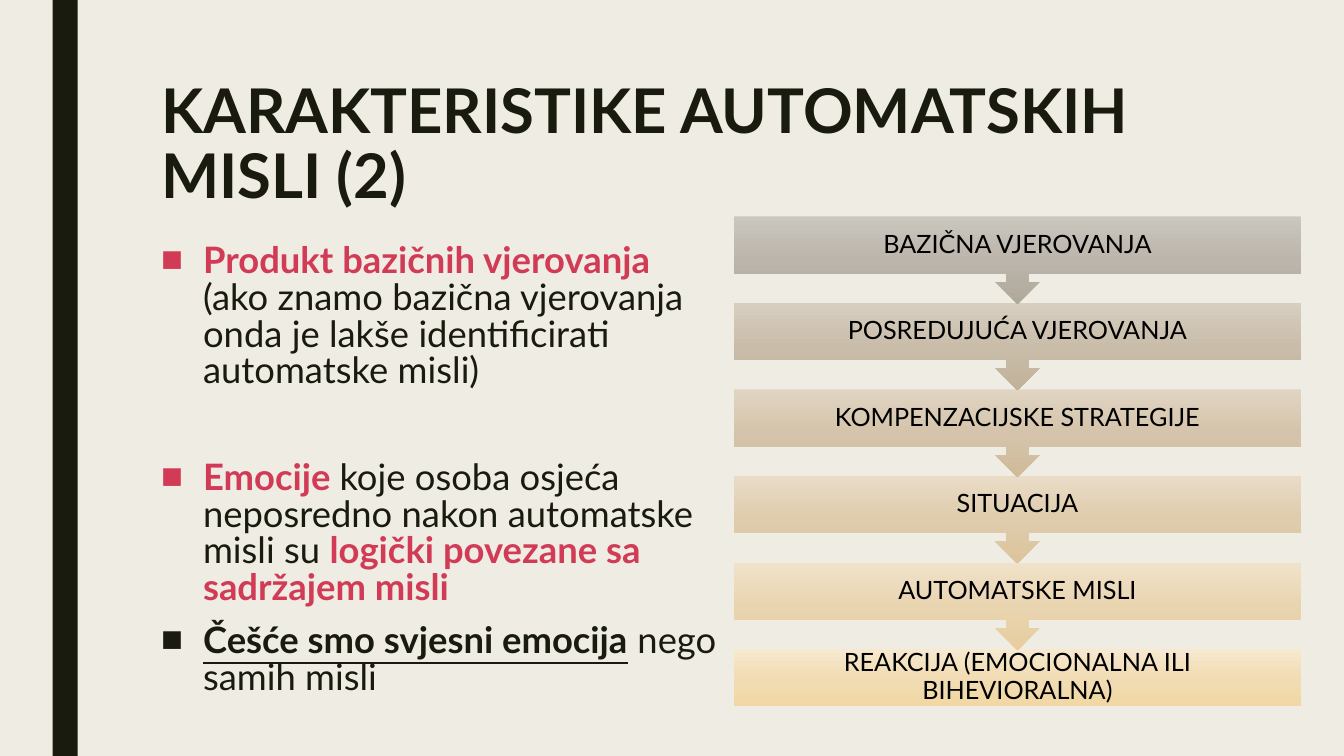
from copy import deepcopy

from lxml.etree import SubElement
from pptx import Presentation
from pptx.dml.color import RGBColor
from pptx.enum.shapes import MSO_SHAPE as Shape
from pptx.enum.text import MSO_ANCHOR as Anchor, PP_ALIGN as Align
from pptx.oxml.ns import qn
from pptx.util import Pt

CREAM = RGBColor(0xEF, 0xED, 0xE3)
DARK = RGBColor(0x19, 0x1B, 0x0E)
PINK = RGBColor(0xD1, 0x3B, 0x56)
BLACK = RGBColor(0, 0, 0)
FONT = "Lato"

# label, then its top, middle and bottom shade
STEPS = [
    ("BAZIČNA VJEROVANJA", "CBC7BF", "BBB5AB", "B0A89A"),
    ("POSREDUJUĆA VJEROVANJA", "D7CEC0", "C9BDAA", "C1B198"),
    ("KOMPENZACIJSKE STRATEGIJE", "E0D4C2", "D5C4AB", "CFBB99"),
    ("SITUACIJA", "E9DBC6", "DFCCAD", "DCC49B"),
    ("AUTOMATSKE MISLI", "F0E2CA", "E9D4B0", "E8CD9E"),
    ("REAKCIJA (EMOCIONALNA ILI BIHEVIORALNA)", "F7E9D0", "F1DCB4", "F1D7A3"),
]

# space before, then runs of text, colour, bold, underline
POINTS = [
    (0, [("Produkt bazičnih vjerovanja", PINK, True, False),
         (" (ako znamo bazična vjerovanja onda je lakše identificirati "
          "automatske misli)", DARK, False, False)]),
    (48, [("Emocije ", PINK, True, False),
          ("koje osoba osjeća neposredno nakon automatske misli su ",
           DARK, False, False),
          ("logički povezane sa sadržajem misli", PINK, True, False)]),
    (10, [("Češće smo svjesni emocija", DARK, True, True),
          (" nego samih misli", DARK, False, False)]),
]


def add_text(left, top, width, height):
    box = slide.shapes.add_textbox(Pt(left), Pt(top), Pt(width), Pt(height))
    box.text_frame.word_wrap = True
    return box.text_frame


def style(para, size, color, spacing):
    para.font.name = FONT
    para.font.size = Pt(size)
    para.font.color.rgb = color
    para.line_spacing = spacing


deck = Presentation()
deck.slide_width, deck.slide_height = Pt(960), Pt(540)
slide = deck.slides.add_slide(deck.slide_layouts[6])
slide.background.fill.solid()
slide.background.fill.fore_color.rgb = CREAM

# Side bar
bar = slide.shapes.add_shape(Shape.RECTANGLE, Pt(37.5), 0, Pt(18), Pt(540))
bar.shadow.inherit = False
bar.fill.solid()
bar.fill.fore_color.rgb = DARK
bar.line.fill.background()

# Title
title = add_text(108, 54, 756, 117).paragraphs[0]
title.text = "KARAKTERISTIKE AUTOMATSKIH MISLI (2)"
style(title, 44, DARK, 0.89)
title.font.bold = True

# Bullet list
body = add_text(108, 171, 416, 334)
for i, (gap, runs) in enumerate(POINTS):
    para = body.add_paragraph() if i else body.paragraphs[0]
    style(para, 26, DARK, 0.84)
    para.space_before, para.space_after = Pt(gap), Pt(2)
    props = para._p.get_or_add_pPr()
    props.set("marL", str(Pt(30)))
    props.set("indent", str(-Pt(30)))
    font = SubElement(props, qn("a:buFont"), typeface="Arial")
    mark = SubElement(props, qn("a:buChar"), char="■")
    props.find(qn("a:defRPr")).addprevious(font)
    font.addnext(mark)
    for text, color, bold, under in runs:
        run = para.add_run()
        run.text = text
        run.font.name, run.font.size = FONT, Pt(26)
        run.font.color.rgb = color
        run.font.bold, run.font.underline = bold, under

# Flow of steps, drawn from the last so that each arrow lies on the next box
for i, (label, *shades) in reversed(list(enumerate(STEPS))):
    last = i == len(STEPS) - 1
    kind = Shape.RECTANGLE if last else Shape.DOWN_ARROW_CALLOUT
    step = slide.shapes.add_shape(kind, Pt(524.3), Pt(154.6 + 61.8 * i),
                                  Pt(405), Pt(40.5 if last else 62.5))
    step.shadow.inherit = False
    step.line.fill.background()
    step.fill.gradient()
    step.fill.gradient_angle = 270
    first = step._element.spPr.find(".//" + qn("a:gs"))
    middle = deepcopy(first)
    middle.set("pos", "50000")
    first.addnext(middle)
    for stop, shade in zip(step.fill.gradient_stops, shades):
        stop.color.rgb = RGBColor.from_string(shade)
    frame = step.text_frame
    frame.word_wrap = True
    frame.vertical_anchor = Anchor.MIDDLE
    frame.margin_left = frame.margin_right = Pt(10)
    frame.margin_top = frame.margin_bottom = Pt(10)
    para = frame.paragraphs[0]
    para.text = label
    para.alignment = Align.CENTER
    style(para, 18, BLACK, 0.9)

deck.save("out.pptx")
